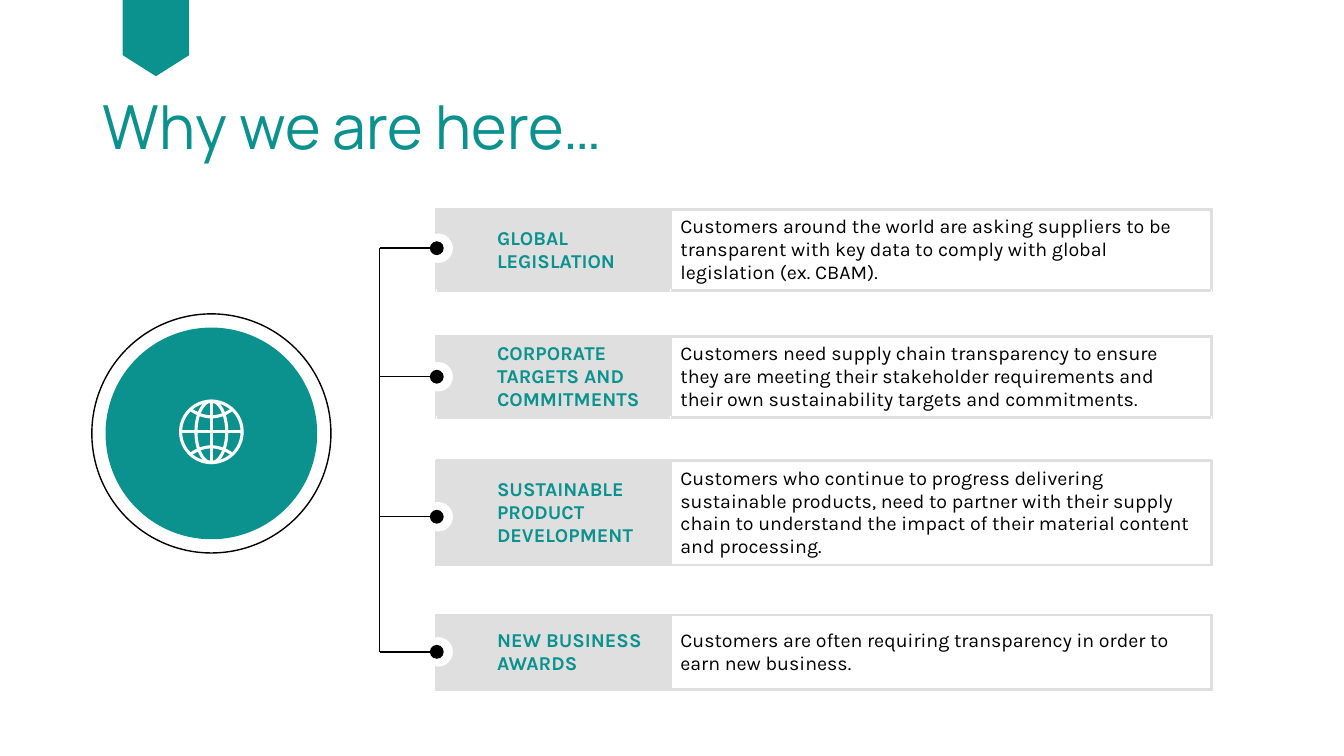
from lxml import etree
from pptx import Presentation
from pptx.dml import color
from pptx.enum import shapes, text
from pptx.oxml import ns
from pptx.util import Pt

TEAL = color.RGBColor(0x0B, 0x92, 0x8E)
GREY = color.RGBColor(0xDF, 0xDF, 0xDF)
BLACK = color.RGBColor(0, 0, 0)
WHITE = color.RGBColor(255, 255, 255)

LABEL = {"name": "Karla", "size": Pt(14), "bold": True}
BODY = {"name": "Karla", "size": Pt(14), "bold": False}
TITLE = {"name": "Manrope", "size": Pt(43.4)}

REASONS = [
    ("GLOBAL LEGISLATION",
     "Customers around the world are asking suppliers to be transparent with key data "
     "to comply with global legislation (ex. CBAM)."),
    None,
    ("CORPORATE TARGETS AND COMMITMENTS",
     "Customers need supply chain transparency to ensure they are meeting their "
     "stakeholder requirements and their own sustainability targets and commitments."),
    None,
    ("SUSTAINABLE PRODUCT DEVELOPMENT",
     "Customers who continue to progress delivering sustainable products, need to partner "
     "with their supply chain to understand the impact of their material content and processing."),
]
AWARDS = [
    ("NEW BUSINESS AWARDS",
     "Customers are often requiring transparency in order to earn new business."),
]
HEIGHTS = [53.3, 33.1, 52.6, 31, 55.4]
STOPS = [177.3, 269.1, 369.1, 465.6]
TRUNK, EDGE = 271.2, 312
HUB_X, HUB_Y = 151, 312
GLOBE_Y = 308.5


def write(para, words, ink, style):
    """Put formatted words in a paragraph."""
    run = para.add_run()
    run.text = words
    for key, value in style.items():
        setattr(run.font, key, value)
    run.font.color.rgb = ink


def paint(shape, fill=None, ink=None, width=1):
    """Set the fill and outline of a shape."""
    shape.shadow.inherit = False
    if fill is None:
        shape.fill.background()
    else:
        shape.fill.solid()
        shape.fill.fore_color.rgb = fill
    if ink is None:
        shape.line.fill.background()
    else:
        shape.line.color.rgb = ink
        shape.line.width = Pt(width)


def oval(slide, x, y, wide, high, **look):
    """Draw an ellipse around a centre."""
    box = [Pt(v) for v in (x - wide / 2, y - high / 2, wide, high)]
    paint(slide.shapes.add_shape(shapes.MSO_SHAPE.OVAL, *box), **look)


def trace(slide, points, close, **look):
    """Draw a path through points."""
    spots = [(Pt(x), Pt(y)) for x, y in points]
    path = slide.shapes.build_freeform(*spots[0])
    path.add_line_segments(spots[1:], close=close)
    paint(path.convert_to_shape(), **look)


def line(slide, x1, y1, x2, y2, ink=BLACK, width=1, dot=False):
    """Draw a straight line, with a dot at its end if asked."""
    link = slide.shapes.add_connector(
        shapes.MSO_CONNECTOR.STRAIGHT, *[Pt(v) for v in (x1, y1, x2, y2)])
    link.line.color.rgb = ink
    link.line.width = Pt(width)
    if dot:
        etree.SubElement(link.line._get_or_add_ln(), ns.qn("a:tailEnd"),
                         type="oval", w="lg", len="lg")
    etree.SubElement(link._element.spPr, ns.qn("a:effectLst"))


def border(cell, sides):
    """Give a cell grey borders on the named sides."""
    props = cell._tc.get_or_add_tcPr()
    for spot, side in enumerate(sides):
        edge = etree.Element(ns.qn("a:ln" + side), w=str(Pt(2.25)))
        fill = etree.SubElement(edge, ns.qn("a:solidFill"))
        etree.SubElement(fill, ns.qn("a:srgbClr"), val=str(GREY))
        props.insert(spot, edge)


def grid(slide, top, rows, heights):
    """Add a table of labels and reasons."""
    wides = [167, 386.4]
    frame = slide.shapes.add_table(
        len(rows), 2, Pt(311.8), Pt(top), Pt(sum(wides)), Pt(sum(heights)))
    table = frame.table
    table.first_row = table.horz_banding = False
    for col, wide in zip(table.columns, wides):
        col.width = Pt(wide)
    for row, high, words in zip(table.rows, heights, rows):
        row.height = Pt(high)
        for col, cell in enumerate(row.cells):
            cell.fill.solid()
            cell.fill.fore_color.rgb = GREY if words and col == 0 else WHITE
            border(cell, "LRTB" if words else "TB")
            if not words:
                continue
            cell.vertical_anchor = text.MSO_ANCHOR.MIDDLE
            para = cell.text_frame.paragraphs[0]
            if col == 0:
                para.level = 1
                props = para._p.get_or_add_pPr()
                props.set("marL", str(Pt(36)))
                props.set("indent", "0")
                write(para, words[col], TEAL, LABEL)
            else:
                write(para, words[col], BLACK, BODY)


def globe(slide):
    """Draw the white globe in the hub."""
    rad = 22
    pen = {"ink": WHITE, "width": 2.2}
    for wide in (2 * rad, rad):
        oval(slide, HUB_X, GLOBE_Y, wide, 2 * rad, **pen)
    line(slide, HUB_X - rad, GLOBE_Y, HUB_X + rad, GLOBE_Y, **pen)
    line(slide, HUB_X, GLOBE_Y - rad, HUB_X, GLOBE_Y + rad, **pen)
    for sign in (-1, 1):
        arc = [(HUB_X + 14.5 * k / 8, GLOBE_Y + sign * (10.7 + 5 * (k / 8) ** 2))
               for k in range(-8, 9)]
        trace(slide, arc, False, **pen)


def head(slide):
    """Add the ribbon and the title."""
    ribbon = [(88, -3), (88, 39.2), (111.4, 54), (134.8, 39.2), (134.8, -3)]
    trace(slide, ribbon, True, fill=TEAL, ink=TEAL, width=0.75)
    box = slide.shapes.add_textbox(Pt(66.2), Pt(53.3), Pt(828), Pt(79.2))
    frame = box.text_frame
    frame.word_wrap = True
    frame.vertical_anchor = text.MSO_ANCHOR.MIDDLE
    para = frame.paragraphs[0]
    para.line_spacing = 0.9
    write(para, "Why we are here…", TEAL, TITLE)


def tree(slide):
    """Draw the trunk and its dotted branches."""
    line(slide, TRUNK, STOPS[0], TRUNK, STOPS[-1])
    for y in STOPS:
        oval(slide, EDGE + 1, y, 21, 21, fill=WHITE)
        line(slide, TRUNK, y, EDGE, y, dot=True)


def main():
    """Build the slide and save it."""
    deck = Presentation()
    deck.slide_width, deck.slide_height = Pt(960), Pt(540)
    slide = deck.slides.add_slide(deck.slide_layouts[6])
    head(slide)
    grid(slide, 439.2, AWARDS, HEIGHTS[:1])
    grid(slide, 149.8, REASONS, HEIGHTS)
    oval(slide, HUB_X, HUB_Y - 2.4, 151.2, 151.2, fill=TEAL)
    oval(slide, HUB_X, HUB_Y - 2.4, 170.8, 170.8, ink=BLACK)
    globe(slide)
    tree(slide)
    deck.save("out.pptx")


if __name__ == "__main__":
    main()
